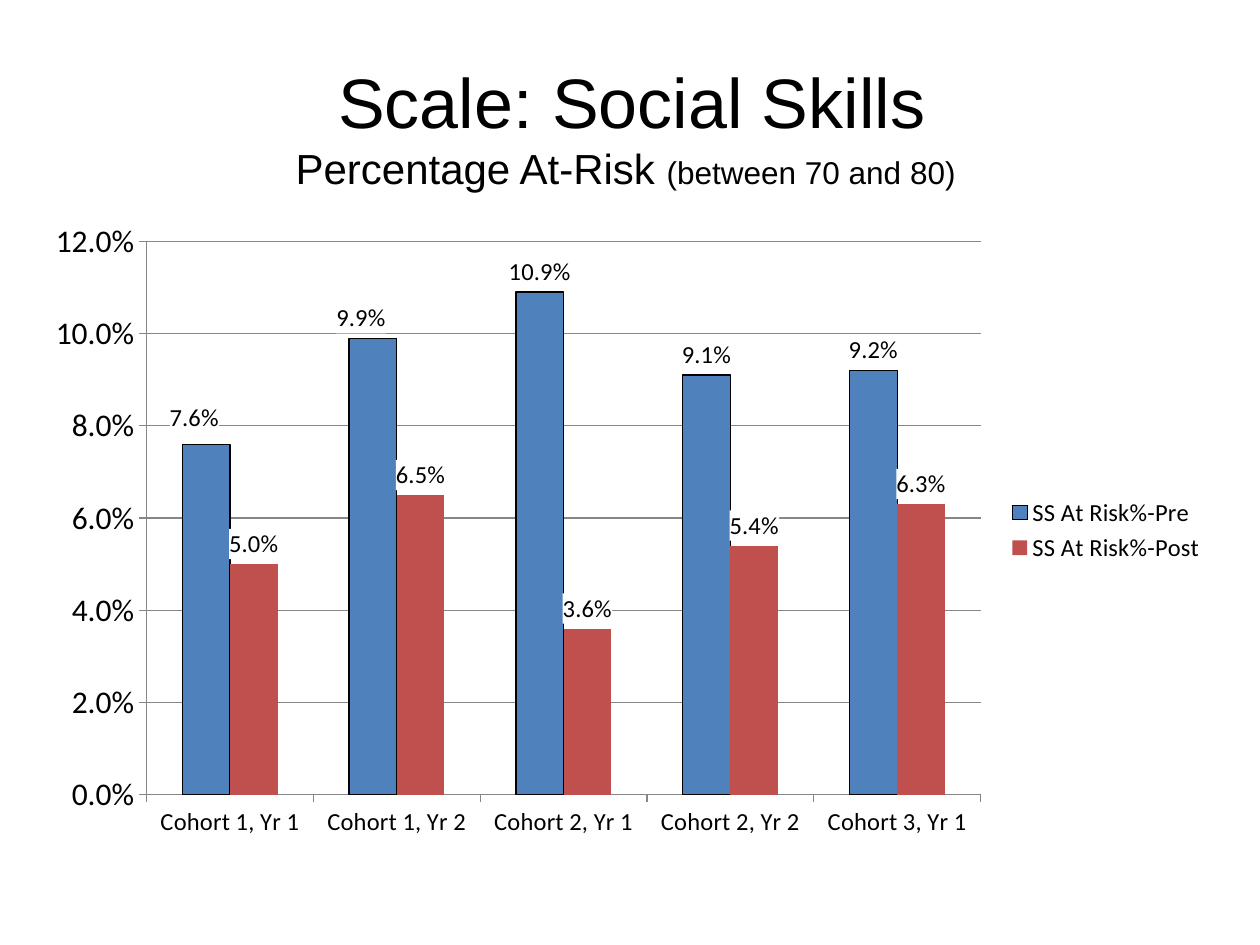
import copy

import pptx
import pptx.chart.data
import pptx.dml.color
import pptx.enum.chart
import pptx.enum.text
import pptx.oxml
import pptx.oxml.ns
import pptx.util

Pt = pptx.util.Pt

# Content
COLORS = {"text": "000000", "pre": "4F81BD", "post": "C0504D",
          "grid": "868686", "label": "FFFFFF"}
TITLE = [("Scale: Social Skills", 40)]
SUBTITLE = [("Percentage At-Risk ", 24), ("(between 70 and 80)", 18)]
COHORTS = ["Cohort 1, Yr 1", "Cohort 1, Yr 2", "Cohort 2, Yr 1",
           "Cohort 2, Yr 2", "Cohort 3, Yr 1"]
SERIES = [
    ("SS At Risk%-Pre", "pre", [0.076, 0.099, 0.109, 0.091, 0.092]),
    ("SS At Risk%-Post", "post", [0.05, 0.065, 0.036, 0.054, 0.063]),
]
PERCENT = "0.0%"
# Shifts of the first "Pre" labels, as fractions of the chart size
LABEL_SHIFTS = [(-0.01, -0.01), (-0.01, 0), (0, 0)]
PLOT = {"x": 0.097, "y": 0.049, "w": 0.703, "h": 0.864}
NAMESPACE = pptx.oxml.ns.nsdecls("c", "a")


def rgb(name):
    return pptx.dml.color.RGBColor.from_string(COLORS[name])


def style_font(font, size, name="Calibri"):
    font.size, font.name, font.bold = Pt(size), name, False
    font.color.rgb = rgb("text")


def write_text(box, pieces, left, top, width, height, font_name="Arial"):
    box.left, box.top, box.width, box.height = map(Pt, (left, top, width, height))
    frame = box.text_frame
    frame.word_wrap = False
    frame.auto_size = pptx.enum.text.MSO_AUTO_SIZE.NONE
    frame.vertical_anchor = pptx.enum.text.MSO_ANCHOR.TOP
    para = frame.paragraphs[0]
    para.alignment = pptx.enum.text.PP_ALIGN.CENTER
    para.space_before = Pt(0)
    for text, size in pieces:
        span = para.add_run()
        span.text = text
        style_font(span.font, size, font_name)


def manual_layout(**places):
    modes = "".join(f'<c:{key}Mode val="edge"/>' for key in "xy") if "w" in places else ""
    target = '<c:layoutTarget val="inner"/>' if "w" in places else ""
    values = "".join(f'<c:{key} val="{value}"/>' for key, value in places.items())
    return pptx.oxml.parse_xml(
        f"<c:layout {NAMESPACE}><c:manualLayout>{target}{modes}{values}"
        "</c:manualLayout></c:layout>")


def style_line(line, color, width=0.75):
    line.color.rgb = rgb(color)
    line.width = Pt(width)


deck = pptx.Presentation()
deck.slide_width, deck.slide_height = Pt(720), Pt(540)
page = deck.slides.add_slide(deck.slide_layouts[0])

# Headings
write_text(page.shapes.title, TITLE, 180, 30, 362, 56)
write_text(page.placeholders[1], SUBTITLE, 160, 78, 395, 36)

# Chart
data = pptx.chart.data.CategoryChartData(number_format=PERCENT)
data.categories = COHORTS
for name, color, values in SERIES:
    data.add_series(name, values)
chart = page.shapes.add_chart(
    pptx.enum.chart.XL_CHART_TYPE.COLUMN_CLUSTERED,
    Pt(18), Pt(120), Pt(678), Pt(366), data).chart
style_font(chart.font, 18)
chart.has_title = False
chart.has_legend = True
chart.legend.position = pptx.enum.chart.XL_LEGEND_POSITION.RIGHT
chart.legend.include_in_layout = False
style_font(chart.legend.font, 14)

# Axes and plot area
for axis, size in ((chart.category_axis, 14), (chart.value_axis, 18)):
    style_font(axis.tick_labels.font, size)
    style_line(axis.format.line, "grid")
    axis.major_tick_mark = pptx.enum.chart.XL_TICK_MARK.OUTSIDE
value_axis = chart.value_axis
value_axis.minimum_scale, value_axis.maximum_scale = 0, 0.12
value_axis.major_unit = 0.02
value_axis.tick_labels.number_format = PERCENT
value_axis.tick_labels.number_format_is_linked = False
style_line(value_axis.major_gridlines.format.line, "grid")
plot_area = chart._chartSpace.chart.plotArea
for old_layout in plot_area.findall(pptx.oxml.ns.qn("c:layout")):
    plot_area.remove(old_layout)
plot_area.insert(0, manual_layout(**PLOT))

# Columns and their labels
plot = chart.plots[0]
plot.gap_width, plot.overlap, plot.vary_by_categories = 150, 0, False
outside_end = pptx.enum.chart.XL_LABEL_POSITION.OUTSIDE_END
for series, (name, color, values) in zip(plot.series, SERIES):
    series.format.fill.solid()
    series.format.fill.fore_color.rgb = rgb(color)
    labels = series.data_labels
    labels.show_value = True
    labels.number_format, labels.number_format_is_linked = PERCENT, False
    labels.position = outside_end
    style_font(labels.font, 14)
    label_xml = labels._element
    label_fill = pptx.oxml.parse_xml(
        f'<c:spPr {NAMESPACE}><a:solidFill><a:srgbClr val="{COLORS["label"]}"/>'
        "</a:solidFill><a:ln><a:noFill/></a:ln></c:spPr>")
    label_xml.find(pptx.oxml.ns.qn("c:txPr")).addprevious(label_fill)

pre_series = plot.series[0]
style_line(pre_series.format.line, "text")
pre_labels = pre_series.data_labels._element
formats = [pre_labels.find(pptx.oxml.ns.qn(tag))
           for tag in ("c:numFmt", "c:spPr", "c:txPr")]
for index, (shift_x, shift_y) in enumerate(LABEL_SHIFTS):
    pre_series.points[index].data_label.position = outside_end
    point_label = pre_labels.findall(pptx.oxml.ns.qn("c:dLbl"))[index]
    for old in point_label.xpath("c:layout | c:numFmt | c:spPr | c:txPr"):
        point_label.remove(old)
    parts = [manual_layout(x=shift_x, y=shift_y)] + [copy.deepcopy(part) for part in formats]
    for place, part in enumerate(parts, 1):
        point_label.insert(place, part)

deck.save("out.pptx")
